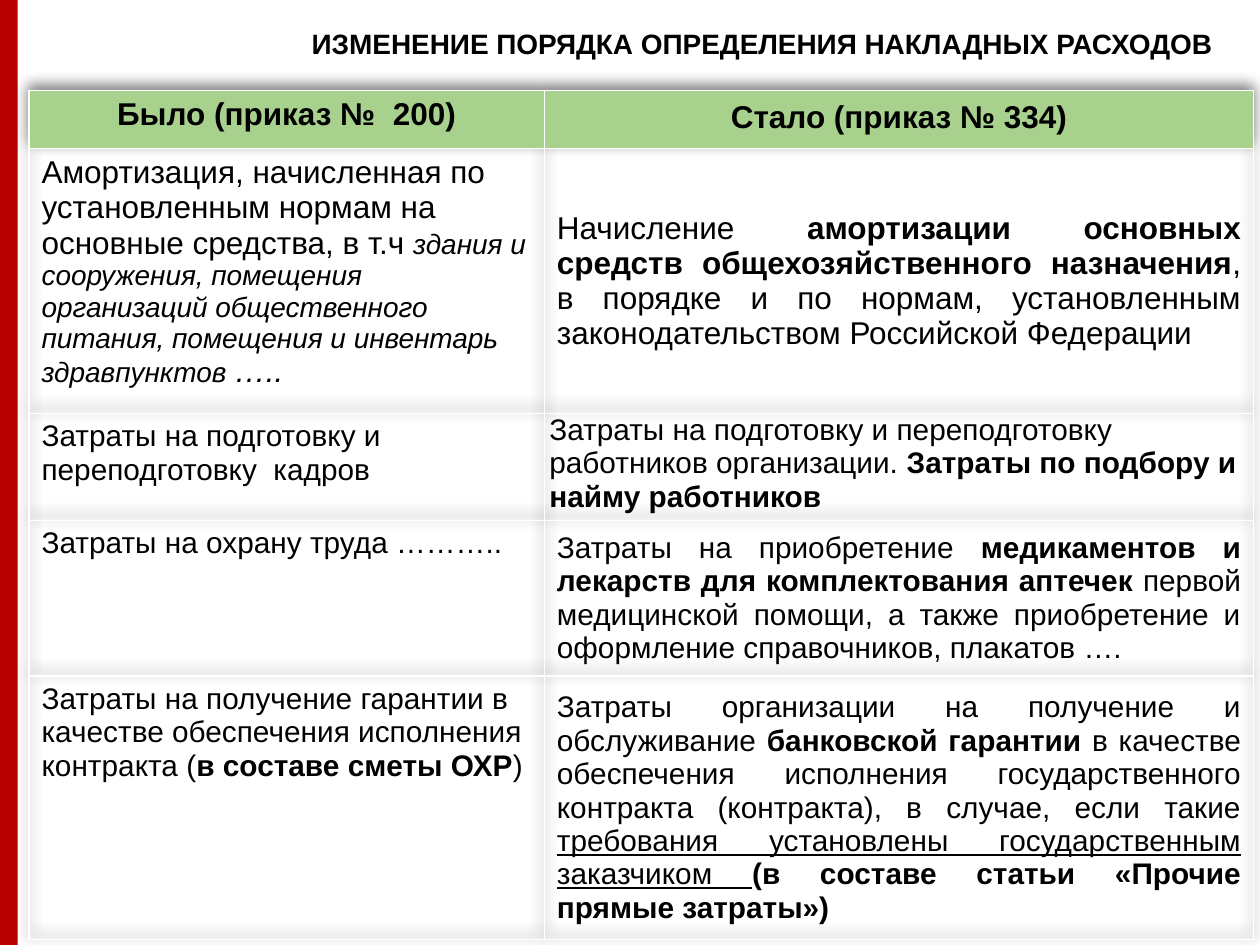
from lxml import etree
from pptx import Presentation, util as u
from pptx.dml import color
from pptx.enum import shapes, text
from pptx.oxml import ns

FONT = "Arial"
BLACK, WHITE, RED, GREEN = "000000", "FFFFFF", "B80000", "A9D18E"
CENTER, LEFT, JUSTIFY = (
    text.PP_ALIGN.CENTER, text.PP_ALIGN.LEFT, text.PP_ALIGN.JUSTIFY)
TOP, MIDDLE = text.MSO_ANCHOR.TOP, text.MSO_ANCHOR.MIDDLE

TITLE = "ИЗМЕНЕНИЕ ПОРЯДКА ОПРЕДЕЛЕНИЯ НАКЛАДНЫХ РАСХОДОВ"
HEADINGS = ["Было (приказ №  200)", "Стало (приказ № 334)"]
COLUMN_WIDTHS = [4.09, 5.63]
ROW_HEIGHTS = [0.46, 2.1, 0.85, 1.23, 2.09]

# One entry per body row: text size, old wording, new wording.
# A run is (wording, style), where style holds b, i, u; a third item overrides the size.
BODY = [
    (18,
     [("Амортизация, начисленная по установленным нормам на основные средства, в т.ч ", ""),
      ("здания и сооружения, помещения организаций общественного питания, "
       "помещения и инвентарь здравпунктов ", "i", 16),
      ("…..", "i")],
     [("Начисление ", ""),
      ("амортизации основных средств общехозяйственного назначения", "b"),
      (", в порядке и по нормам, установленным законодательством Российской Федерации", "")]),
    (17,
     [("Затраты на подготовку и переподготовку  кадров", "")],
     [("Затраты на подготовку и переподготовку работников организации. ", ""),
      ("Затраты по подбору и найму работников", "b")]),
    (17,
     [("Затраты на охрану труда ………..", "")],
     [("Затраты на приобретение ", ""),
      ("медикаментов и лекарств для комплектования аптечек ", "b"),
      ("первой медицинской помощи, а также приобретение и оформление "
       "справочников, плакатов ….", "")]),
    (17,
     [("Затраты на получение гарантии в качестве обеспечения исполнения контракта (", ""),
      ("в составе сметы ОХР", "b"),
      (")", "")],
     [("Затраты организации на получение и обслуживание ", ""),
      ("банковской гарантии ", "b"),
      ("в качестве обеспечения исполнения государственного контракта (контракта), "
       "в случае, если такие ", ""),
      ("требования установлены государственным заказчиком ", "u"),
      ("(в составе статьи «Прочие прямые затраты»)", "b")]),
]
COMPACT_ROW = 2


def rgb(value):
    return color.RGBColor.from_string(value)


def inches(box):
    return [u.Inches(length) for length in box]


def add_runs(para, runs, size, align):
    para.alignment = align
    for wording, style, *own_size in runs:
        span = para.add_run()
        span.text = wording
        font = span.font
        font.name = FONT
        font.size = u.Pt(own_size[0] if own_size else size)
        font.color.rgb = rgb(BLACK)
        font.bold, font.italic, font.underline = (mark in style for mark in "biu")


def add_side_bar(page, box):
    bar = page.shapes.add_shape(shapes.MSO_SHAPE.RECTANGLE, *inches(box))
    bar.shadow.inherit = False
    bar.fill.solid()
    bar.fill.fore_color.rgb = rgb(RED)
    bar.line.fill.background()


def add_title(page, box):
    frame = page.shapes.add_textbox(*inches(box)).text_frame
    frame.word_wrap = True
    frame.auto_size = text.MSO_AUTO_SIZE.SHAPE_TO_FIT_TEXT
    add_runs(frame.paragraphs[0], [(TITLE, "b")], 16, CENTER)


def set_borders(cell):
    properties = cell._tc.get_or_add_tcPr()
    for position, side in enumerate(("lnL", "lnR", "lnT", "lnB")):
        line = etree.Element(ns.qn(f"a:{side}"), w=str(u.Pt(1)))
        fill = etree.SubElement(line, ns.qn("a:solidFill"))
        etree.SubElement(fill, ns.qn("a:srgbClr"), val=WHITE)
        properties.insert(position, line)


def add_table_shadow(table):
    effects = etree.Element(ns.qn("a:effectLst"))
    shadow = etree.SubElement(
        effects, ns.qn("a:outerShdw"), blurRad=str(u.Inches(0.1)),
        dist=str(u.Inches(0.04)), dir="16200000", rotWithShape="0")
    shade = etree.SubElement(shadow, ns.qn("a:srgbClr"), val=BLACK)
    etree.SubElement(shade, ns.qn("a:alpha"), val="50000")
    table._tbl.tblPr.insert(0, effects)


def fill_cell(cell, runs, size, align, anchor, background=None):
    if background:
        cell.fill.solid()
        cell.fill.fore_color.rgb = rgb(background)
    else:
        cell.fill.background()
    set_borders(cell)
    cell.vertical_anchor = anchor
    add_runs(cell.text_frame.paragraphs[0], runs, size, align)


def tighten_cell(cell):
    """Shrink the margins of a cell and indent its text slightly."""
    cell.margin_left = cell.margin_right = u.Inches(0.01)
    cell.margin_top = cell.margin_bottom = 0
    properties = cell.text_frame.paragraphs[0]._p.get_or_add_pPr()
    properties.set("marL", str(u.Inches(0.03)))
    properties.set("indent", "0")


def add_comparison(page, box):
    table = page.shapes.add_table(
        len(ROW_HEIGHTS), len(COLUMN_WIDTHS), *inches(box)).table
    table.horz_banding = False
    add_table_shadow(table)
    for column, width in zip(table.columns, COLUMN_WIDTHS):
        column.width = u.Inches(width)
    for row, height in zip(table.rows, ROW_HEIGHTS):
        row.height = u.Inches(height)

    for column, (heading, anchor) in enumerate(zip(HEADINGS, (TOP, MIDDLE))):
        fill_cell(table.cell(0, column), [(heading, "b")], 18, CENTER, anchor, GREEN)
    table.cell(0, 1).text_frame.paragraphs[0].line_spacing = u.Pt(18)

    for row, (size, old, new) in enumerate(BODY, start=1):
        compact = row == COMPACT_ROW
        fill_cell(table.cell(row, 0), old, size, LEFT, TOP)
        fill_cell(table.cell(row, 1), new, size,
                  LEFT if compact else JUSTIFY, TOP if compact else MIDDLE)
    tighten_cell(table.cell(COMPACT_ROW, 1))


def main():
    deck = Presentation()
    deck.slide_width, deck.slide_height = inches((10, 7.5))
    page = deck.slides.add_slide(deck.slide_layouts[6])
    add_side_bar(page, (-0.01, 0, 0.15, 7.5))
    add_title(page, (1.19, 0.16, 9.72, 0.37))
    add_comparison(page, (0.23, 0.72, sum(COLUMN_WIDTHS), sum(ROW_HEIGHTS)))
    deck.save("out.pptx")


if __name__ == "__main__":
    main()
